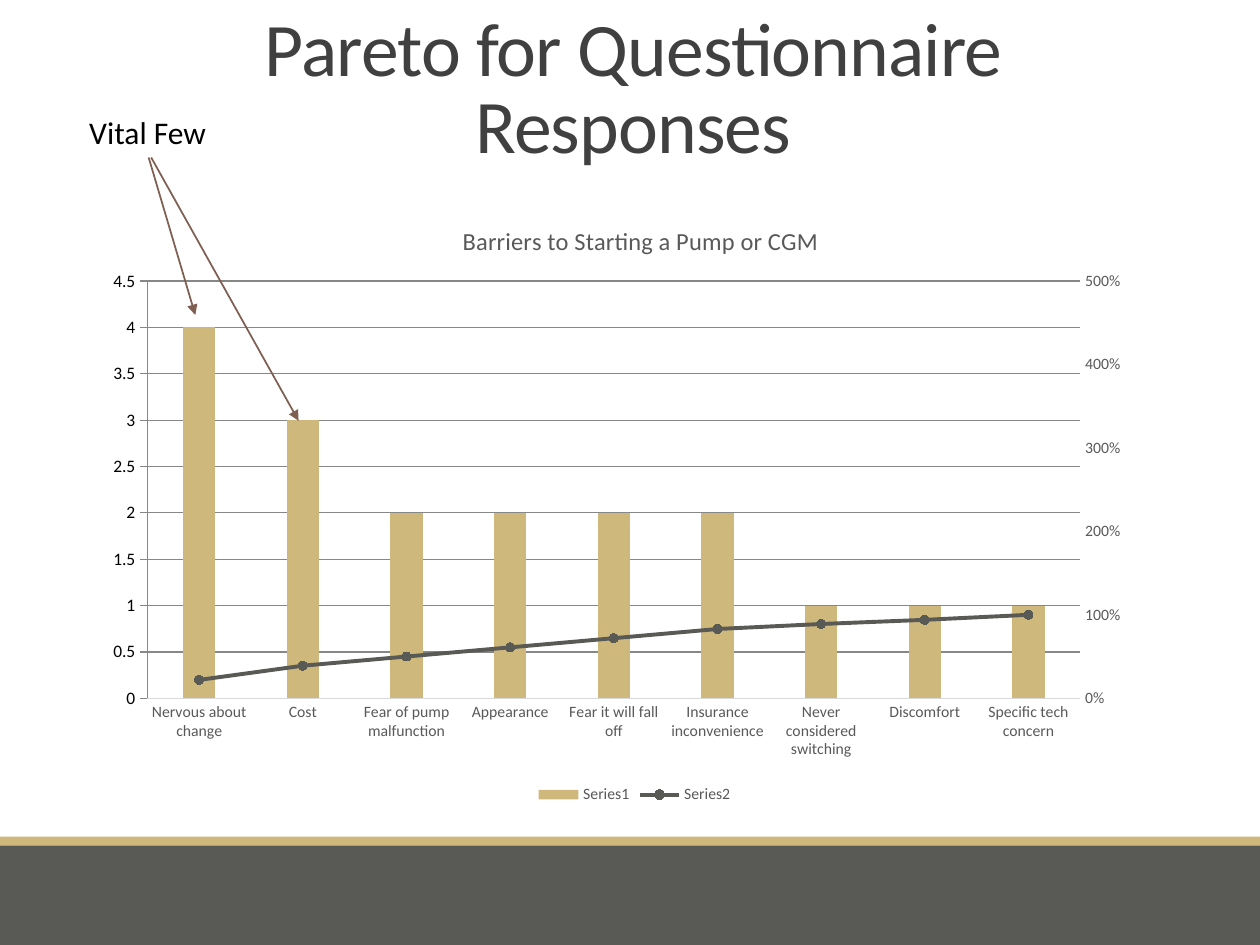
import lxml.etree
import pptx
import pptx.chart.data
import pptx.dml.color
import pptx.enum.chart
import pptx.enum.dml
import pptx.enum.shapes
import pptx.enum.text
import pptx.oxml
import pptx.oxml.ns
import pptx.util

Inches, Pt = pptx.util.Inches, pptx.util.Pt
qn = pptx.oxml.ns.qn
color = pptx.dml.color.RGBColor.from_string

THEME = {
    "gold": color("CFB87C"), "slate": color("595955"), "arrow": color("7F5F52"),
    "grid": color("D9D9D9"), "label": color("595959"),
    "title": {"name": "Calibri", "size": Pt(43.2), "color": color("404040")},
    "callout": {"name": "Calibri", "size": Pt(18), "color": color("000000")},
    "chart": {"name": "Calibri", "size": Pt(10), "color": color("000000")},
    "chart_title": {"name": "Calibri", "size": Pt(14), "color": color("595959"), "bold": False},
    "small": {"name": "Calibri", "size": Pt(9), "color": color("595959")},
}


def style_font(font, values):
    for name, value in values.items():
        if name == "color":
            font.color.rgb = value
        else:
            setattr(font, name, value)


def add_text(page, place, text, values, frame_format, para_format):
    box = page.shapes.add_textbox(*map(Inches, place))
    for name, value in frame_format.items():
        setattr(box.text_frame, name, value)
    para = box.text_frame.paragraphs[0]
    for name, value in para_format.items():
        setattr(para, name, value)
    span = para.add_run()
    span.text = text
    style_font(span.font, values)
    return span


deck = pptx.Presentation()
deck.slide_width, deck.slide_height = Inches(10), Inches(7.5)
page = deck.slides.add_slide(deck.slide_layouts[6])

# Footer bands
for top, height, fill in ((6.71, 0.79, "slate"), (6.64, 0.07, "gold")):
    band = page.shapes.add_shape(pptx.enum.shapes.MSO_SHAPE.RECTANGLE,
                                 0, Inches(top), Inches(10), Inches(height))
    band.shadow.inherit = False
    band.fill.solid()
    band.fill.fore_color.rgb = THEME[fill]
    band.line.fill.background()

# Title
title = add_text(
    page, (0.9, 0.31, 8.25, 1.08), "Pareto for Questionnaire Responses", THEME["title"],
    {"word_wrap": True, "vertical_anchor": pptx.enum.text.MSO_ANCHOR.BOTTOM},
    {"alignment": pptx.enum.text.PP_ALIGN.CENTER, "line_spacing": 0.85})
title.font._element.set("spc", "-50")

# Pareto data: counts as columns, cumulative share as a line
data = pptx.chart.data.CategoryChartData()
data.categories = [
    "Nervous about change", "Cost", "Fear of pump malfunction", "Appearance",
    "Fear it will fall off", "Insurance inconvenience", "Never considered switching",
    "Discomfort", "Specific tech concern"]
data.add_series("Series1", (4, 3, 2, 2, 2, 2, 1, 1, 1), "General")
data.add_series("Series2", (0.22, 0.39, 0.5, 0.61, 0.72, 0.83, 0.89, 0.94, 1), "0%")
chart = page.shapes.add_chart(
    pptx.enum.chart.XL_CHART_TYPE.COLUMN_CLUSTERED,
    Inches(0.9), Inches(1.55), Inches(8.25), Inches(4.87), data).chart
style_font(chart.font, THEME["chart"])

# Move the second series to a line plot on its own axes
plot_area = chart._chartSpace.chart.plotArea
bar_plot = plot_area.find(qn("c:barChart"))
share = bar_plot.findall(qn("c:ser"))[1]
invert = share.find(qn("c:invertIfNegative"))
if invert is not None:
    share.remove(invert)
namespace = pptx.oxml.ns.nsdecls("c")
line_plot = pptx.oxml.parse_xml(
    f'<c:lineChart {namespace}><c:grouping val="standard"/><c:varyColors val="0"/>'
    '<c:marker val="1"/><c:axId val="5001"/><c:axId val="5002"/></c:lineChart>')
line_plot.insert(2, share)
bar_plot.addnext(line_plot)
right_axis = pptx.oxml.parse_xml(
    f'<c:valAx {namespace}><c:axId val="5002"/><c:scaling><c:orientation val="minMax"/>'
    '<c:max val="1"/><c:min val="0"/></c:scaling><c:delete val="0"/><c:axPos val="r"/>'
    '<c:numFmt formatCode="0%" sourceLinked="0"/><c:majorTickMark val="out"/>'
    '<c:minorTickMark val="none"/><c:tickLblPos val="nextTo"/><c:crossAx val="5001"/>'
    '<c:crosses val="max"/><c:crossBetween val="between"/><c:majorUnit val="0.2"/></c:valAx>')
hidden_axis = pptx.oxml.parse_xml(
    f'<c:catAx {namespace}><c:axId val="5001"/><c:scaling><c:orientation val="minMax"/>'
    '</c:scaling><c:delete val="1"/><c:axPos val="b"/><c:majorTickMark val="none"/>'
    '<c:minorTickMark val="none"/><c:tickLblPos val="nextTo"/><c:crossAx val="5002"/>'
    '<c:crosses val="autoZero"/></c:catAx>')
plot_area.findall(qn("c:valAx"))[-1].addnext(right_axis)
right_axis.addnext(hidden_axis)

# Columns and line
columns, curve = chart.plots
for name, value in {"gap_width": 219, "overlap": -27, "vary_by_categories": False}.items():
    setattr(columns, name, value)
columns.series[0].format.fill.solid()
columns.series[0].format.fill.fore_color.rgb = THEME["gold"]
cumulative = curve.series[0]
cumulative.smooth = False
cumulative.format.line.color.rgb = THEME["slate"]
cumulative.format.line.width = Pt(2.25)
cumulative.marker.style = pptx.enum.chart.XL_MARKER_STYLE.CIRCLE
cumulative.marker.size = 5
cumulative.marker.format.fill.solid()
cumulative.marker.format.fill.fore_color.rgb = THEME["slate"]
cumulative.marker.format.line.color.rgb = THEME["slate"]

# Axes
counts, causes = chart.value_axis, chart.category_axis
shares = pptx.chart.axis.ValueAxis(right_axis)
for axis in (counts, causes, shares):
    style_font(axis.tick_labels.font, THEME["small"])
for axis in (counts, causes):
    axis.major_tick_mark = pptx.enum.chart.XL_TICK_MARK.NONE
for axis in (counts, shares):
    axis.format.line.fill.background()
for name, value in {"minimum_scale": 0, "maximum_scale": 5, "major_unit": 1,
                    "has_major_gridlines": True}.items():
    setattr(counts, name, value)
for line in (counts.major_gridlines.format.line, causes.format.line):
    line.color.rgb = THEME["grid"]
    line.width = Pt(0.75)

# Chart title and legend
chart.has_title = True
heading = chart.chart_title.text_frame.paragraphs[0].add_run()
heading.text = "Barriers to Starting a Pump or CGM"
style_font(heading.font, THEME["chart_title"])
chart.chart_title.include_in_layout = False
chart.has_legend = True
chart.legend.position = pptx.enum.chart.XL_LEGEND_POSITION.BOTTOM
chart.legend.include_in_layout = False
style_font(chart.legend.font, THEME["small"])

# Fixed places for the plot area and the chart title
places = (
    (plot_area, 0, {"layoutTarget": "inner", "xMode": "edge", "yMode": "edge",
                    "x": 0.03, "y": 0.14, "w": 0.9, "h": 0.68}),
    (chart.chart_title._element, 1, {"xMode": "edge", "yMode": "edge", "x": 0.33, "y": 0.04}),
)
for parent, index, values in places:
    for old in parent.findall(qn("c:layout")):
        parent.remove(old)
    layout = pptx.oxml.parse_xml(f"<c:layout {namespace}><c:manualLayout/></c:layout>")
    for name, value in values.items():
        lxml.etree.SubElement(layout[0], qn(f"c:{name}")).set("val", str(value))
    parent.insert(index, layout)

# Callout with arrows to the two tallest columns
for start_x, end_x, end_y in ((1.18, 1.55, 2.5), (1.2, 2.37, 3.34)):
    arrow = page.shapes.add_connector(
        pptx.enum.shapes.MSO_CONNECTOR.STRAIGHT,
        Inches(start_x), Inches(1.25), Inches(end_x), Inches(end_y))
    arrow.line.color.rgb = THEME["arrow"]
    arrow.line.width = Pt(1)
    lxml.etree.SubElement(arrow.line._get_or_add_ln(), qn("a:tailEnd")).set("type", "triangle")
    lxml.etree.SubElement(arrow._element.spPr, qn("a:effectLst"))
add_text(page, (0.61, 0.85, 1.35, 0.4), "Vital Few", THEME["callout"],
         {"word_wrap": True, "auto_size": pptx.enum.text.MSO_AUTO_SIZE.SHAPE_TO_FIT_TEXT}, {})

deck.save("out.pptx")
